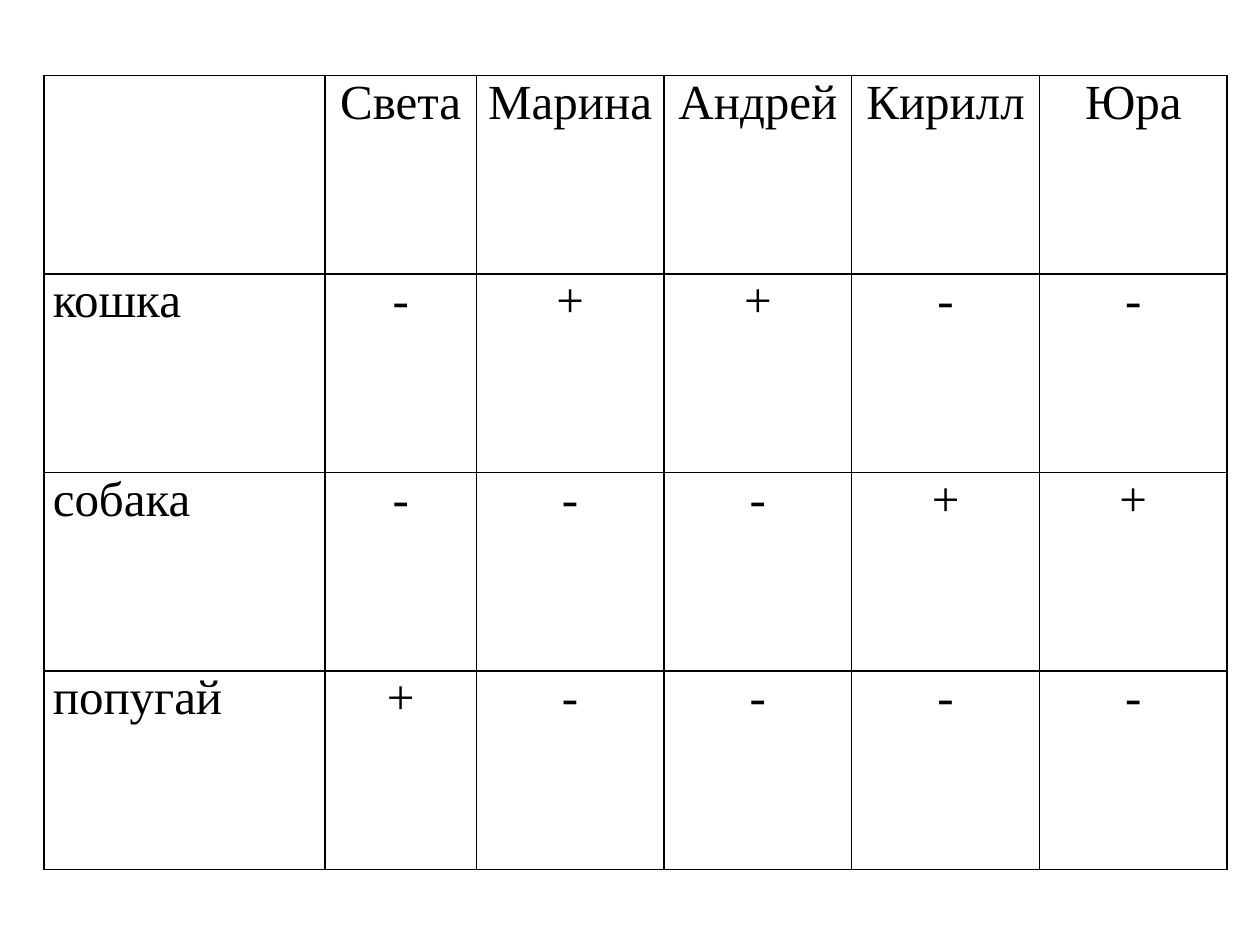
from dataclasses import dataclass

from lxml import etree
from pptx import Presentation
from pptx import util as u
from pptx.dml.color import RGBColor
from pptx.enum import text
from pptx.oxml import ns

WIDE, HIGH = 10, 7.5
INK = "000000"
NAMES = ["Света", "Марина", "Андрей", "Кирилл", "Юра"]
COLS = [2.23, 1.2] + [1.49] * 4
FONT = {"name": "Times New Roman", "size": u.Pt(28), "bold": False}
CELL = {"margin_left": u.Inches(0.07), "margin_right": u.Inches(0.07),
        "margin_top": 0, "margin_bottom": 0}


@dataclass
class Pet:
    name: str
    marks: str


PETS = [Pet("кошка", "-++--"), Pet("собака", "---++"), Pet("попугай", "+----")]


def tint(code: str) -> RGBColor:
    return RGBColor.from_string(code)


def assign(item, vals: dict) -> None:
    for key, val in vals.items():
        setattr(item, key, val)


def edge(cell, code: str, size: float) -> None:
    props = cell._tc.get_or_add_tcPr()
    for side in ("L", "R", "T", "B"):
        line = etree.SubElement(props, ns.qn(f"a:ln{side}"), w=str(u.Pt(size)))
        fill = etree.SubElement(line, ns.qn("a:solidFill"))
        etree.SubElement(fill, ns.qn("a:srgbClr"), val=code)


def write(cell, words: str, align) -> None:
    assign(cell, CELL)
    edge(cell, INK, 1)
    cell.fill.background()
    if not words:
        return
    para = cell.text_frame.paragraphs[0]
    assign(para, {"alignment": align, "space_after": u.Pt(6)})
    run = para.add_run()
    run.text = words
    assign(run.font, FONT)
    run.font.color.rgb = tint(INK)


def draw(slide, rows: list) -> None:
    left, top, tall = 0.035 * WIDE, 0.08 * HIGH, 0.84 * HIGH
    box = [u.Inches(n) for n in (left, top, sum(COLS), tall)]
    grid = slide.shapes.add_table(len(rows), len(COLS), *box).table
    assign(grid, {"first_row": False, "horz_banding": False})
    for col, wide in zip(grid.columns, COLS):
        col.width = u.Inches(wide)
    for r, row in enumerate(rows):
        for c, words in enumerate(row):
            align = text.PP_ALIGN.CENTER if c else text.PP_ALIGN.JUSTIFY
            write(grid.cell(r, c), words, align)


def main() -> None:
    deck = Presentation()
    assign(deck, {"slide_width": u.Inches(WIDE), "slide_height": u.Inches(HIGH)})
    slide = deck.slides.add_slide(deck.slide_layouts[6])
    draw(slide, [["", *NAMES]] + [[pet.name, *pet.marks] for pet in PETS])
    deck.save("out.pptx")


if __name__ == "__main__":
    main()
